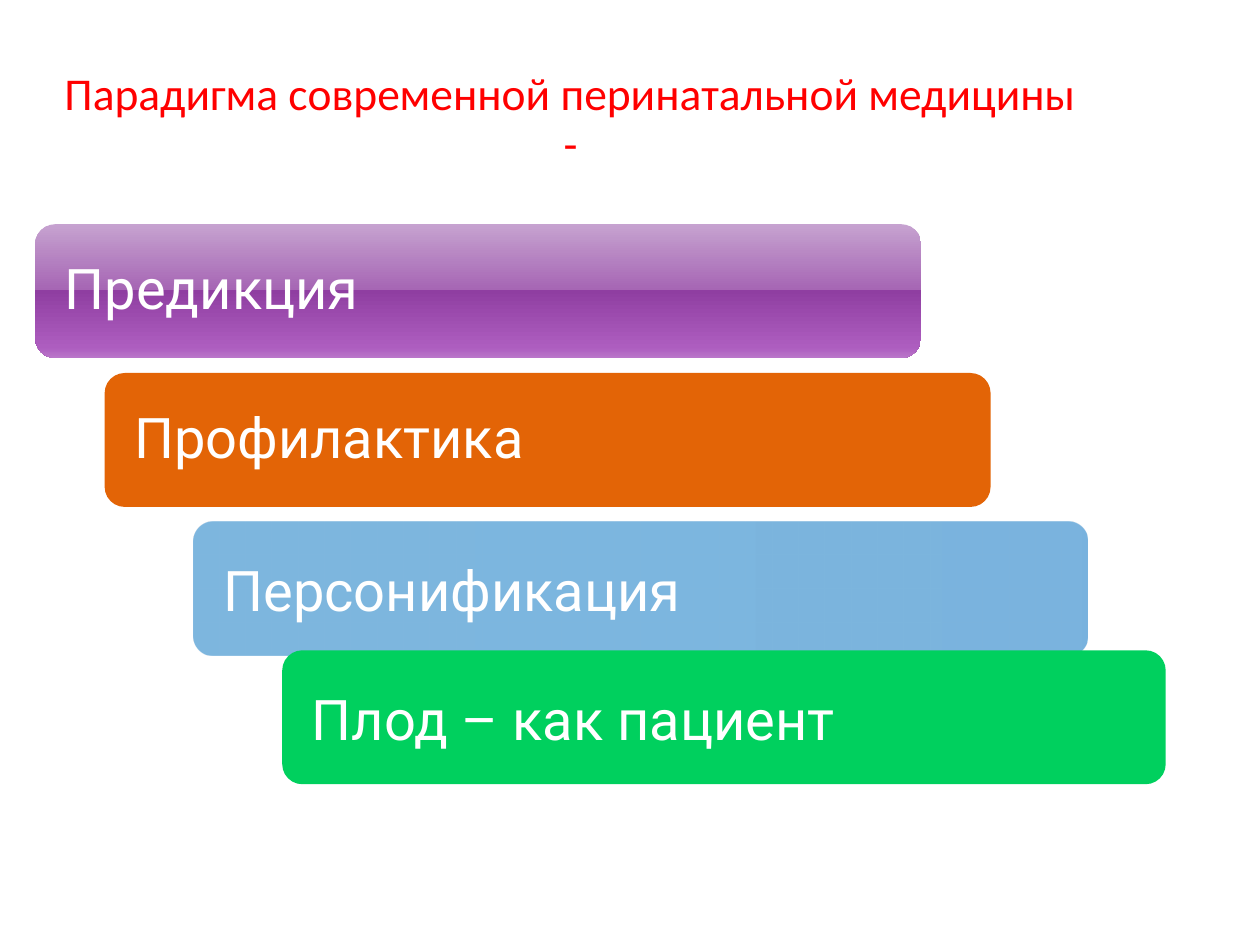
from dataclasses import dataclass

from lxml.etree import SubElement
from pptx import Presentation
from pptx.dml.color import RGBColor
from pptx.enum.shapes import MSO_SHAPE
from pptx.enum.text import MSO_ANCHOR, PP_ALIGN
from pptx.oxml.ns import qn
from pptx.util import Cm, Pt

WHITE = RGBColor(0xFF, 0xFF, 0xFF)
RED = RGBColor(0xFF, 0x00, 0x00)
ORANGE = RGBColor(0xE3, 0x64, 0x06)
BLUE = RGBColor(0x00, 0x70, 0xC0)
GREEN = RGBColor(0x00, 0xD0, 0x5E)
LILAC = RGBColor(0xC6, 0xA2, 0xD0)
MAUVE = RGBColor(0xA6, 0x66, 0xB4)
PURPLE = RGBColor(0x8F, 0x3E, 0xA1)
ORCHID = RGBColor(0xAD, 0x5D, 0xBF)
LAVENDER = RGBColor(0xBA, 0x76, 0xCA)

BAND_HEIGHT = Cm(2.7)
INSET = Cm(0.48)


@dataclass(frozen=True)
class Stop:
    position: int
    color: RGBColor
    opacity: int = 100


@dataclass(frozen=True)
class Band:
    label: str
    left: float
    top: float
    width: float
    stops: tuple[Stop, ...]
    angle: int = 0
    text_drop: float = 0


BANDS = (
    Band("Предикция", 0.71, 4.52, 17.86,
         (Stop(0, LILAC), Stop(49, MAUVE), Stop(49, PURPLE),
          Stop(92, ORCHID), Stop(100, LAVENDER)), angle=90),
    Band("Профилактика", 2.11, 7.52, 17.86, (Stop(0, ORANGE),)),
    Band("Персонификация", 3.91, 10.52, 18.01,
         (Stop(0, BLUE, 50), Stop(80, BLUE, 51), Stop(100, BLUE, 52)), text_drop=0.2),
    Band("Плод – как пациент", 5.69, 13.11, 17.81, (Stop(0, GREEN),), text_drop=0.2),
)


def style_span(span, font_name: str, size: int, color: RGBColor) -> None:
    span.font.name = font_name
    span.font.size = Pt(size)
    span.font.color.rgb = color


def fill_band(shape, band: Band) -> None:
    if len(band.stops) == 1:
        shape.fill.solid()
        shape.fill.fore_color.rgb = band.stops[0].color
        return
    shape.fill.gradient()
    shape.fill.gradient_angle = 0
    gradient = shape._element.spPr.find(qn("a:gradFill"))
    gradient.find(qn("a:lin")).set("ang", str(band.angle * 60000))
    stop_list = gradient.find(qn("a:gsLst"))
    for old_stop in list(stop_list):
        stop_list.remove(old_stop)
    for stop in band.stops:
        node = SubElement(stop_list, qn("a:gs"), pos=str(stop.position * 1000))
        color = SubElement(node, qn("a:srgbClr"), val=str(stop.color))
        if stop.opacity < 100:
            SubElement(color, qn("a:alpha"), val=str(stop.opacity * 1000))


def draw_band(page, band: Band) -> None:
    shape = page.shapes.add_shape(
        MSO_SHAPE.ROUNDED_RECTANGLE,
        Cm(band.left), Cm(band.top), Cm(band.width), BAND_HEIGHT)
    shape.adjustments[0] = 0.15
    shape.shadow.inherit = False
    shape.line.fill.background()
    fill_band(shape, band)
    frame = shape.text_frame
    frame.word_wrap = True
    frame.vertical_anchor = MSO_ANCHOR.MIDDLE
    frame.margin_left = frame.margin_right = frame.margin_bottom = INSET
    frame.margin_top = INSET + Cm(band.text_drop)
    para = frame.paragraphs[0]
    para.alignment = PP_ALIGN.LEFT
    para.line_spacing = 0.9
    span = para.add_run()
    span.text = band.label
    style_span(span, "Roboto", 32, WHITE)


def draw_title(page) -> None:
    box = page.shapes.add_textbox(Cm(0.71), Cm(1.32), Cm(21.59), Cm(2.77))
    box.text_frame.word_wrap = True
    para = box.text_frame.paragraphs[0]
    para.alignment = PP_ALIGN.CENTER
    para.line_spacing = 0.9
    heading = para.add_run()
    heading.text = "Парадигма современной перинатальной медицины"
    para.add_line_break()
    dash = para.add_run()
    dash.text = "-"
    for span in (heading, dash):
        style_span(span, "Calibri", 26, RED)


def main() -> None:
    deck = Presentation()
    deck.slide_width = Cm(25.4)
    deck.slide_height = Cm(19.05)
    page = deck.slides.add_slide(deck.slide_layouts[6])
    draw_title(page)
    for band in BANDS:
        draw_band(page, band)
    deck.save("out.pptx")


if __name__ == "__main__":
    main()
